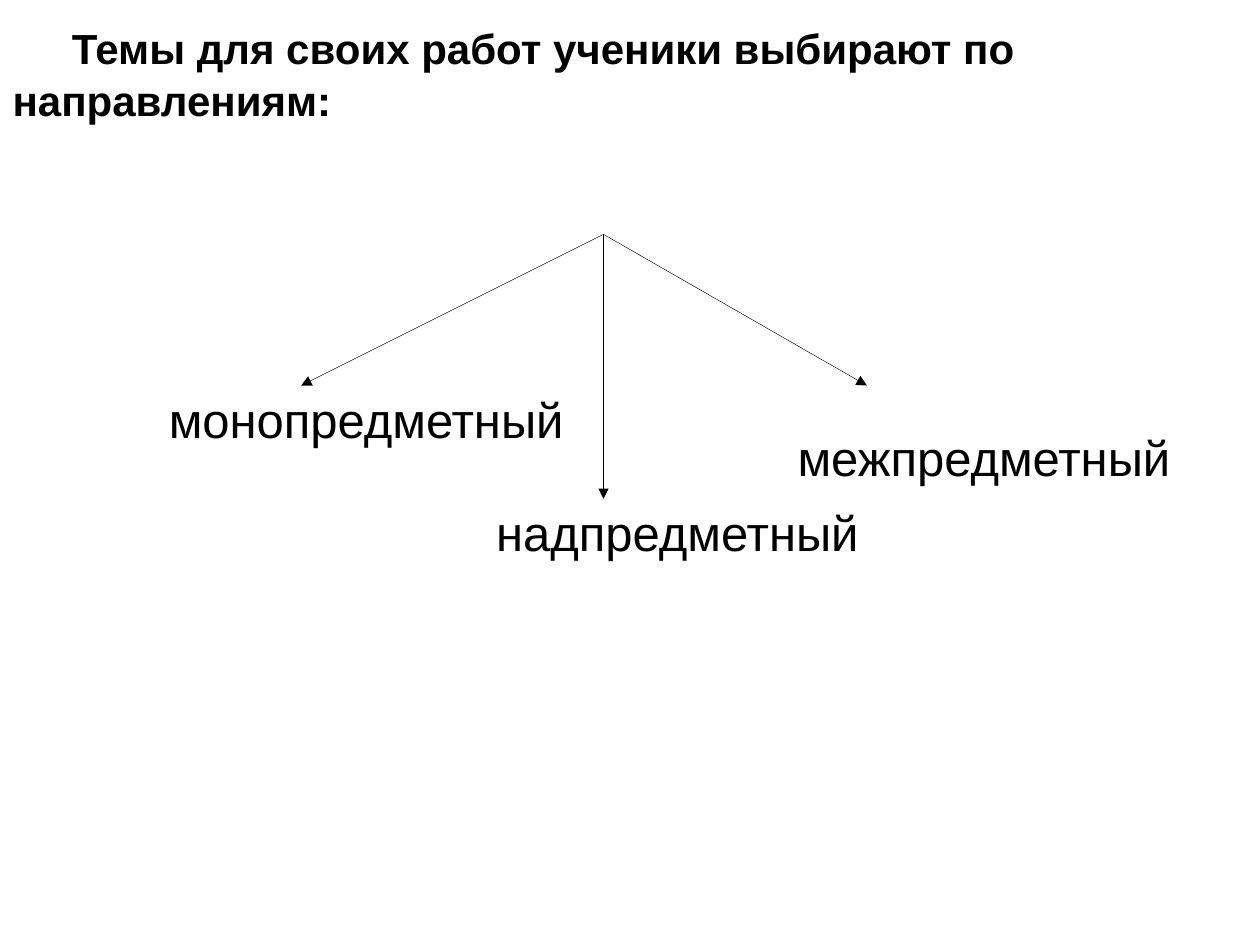
from lxml import etree
from pptx import Presentation
from pptx import util as u
from pptx.dml.color import RGBColor
from pptx.enum import shapes, text
from pptx.oxml.ns import qn

BLACK = RGBColor(0x00, 0x00, 0x00)
FONT = "Arial"
LABEL_INDENT = 0.28
TITLE_INDENT = 0.47
APEX = (2.4, 0)
DIRECTIONS = [
    ("монопредметный", (0, 1.2), 0.25, (-1.4, 1.2, 3.59, 1.13), text.PP_ALIGN.LEFT),
    ("межпредметный", (4.49, 1.2), 0.25, (3.59, 1.5, 3.89, 0.6), text.PP_ALIGN.LEFT),
    ("надпредметный", (2.4, 2.1), 0.5, (0.9, 2.1, 3.89, 1.23), text.PP_ALIGN.CENTER),
]


def style_paragraph(paragraph, size, indent, align, bold=False):
    """Set the alignment, first-line indent and font of a paragraph."""
    paragraph.alignment = align
    properties = paragraph._p.get_or_add_pPr()
    properties.set("marL", "0")
    properties.set("indent", str(u.Inches(indent)))
    for run in paragraph.runs:
        run.font.name = FONT
        run.font.size = u.Pt(size)
        run.font.bold = bold
        run.font.color.rgb = BLACK


def place_title(slide, left, top, width, height):
    """Fill and format the title placeholder in the given box."""
    title = slide.shapes.title
    title.left, title.top = u.Inches(left), u.Inches(top)
    title.width, title.height = u.Inches(width), u.Inches(height)
    frame = title.text_frame
    frame.text = "Темы для своих работ ученики выбирают по направлениям:"
    frame.word_wrap = True
    frame.auto_size = text.MSO_AUTO_SIZE.NONE
    frame.vertical_anchor = text.MSO_ANCHOR.TOP
    heading = frame.paragraphs[0]
    heading.line_spacing = 1.04
    style_paragraph(heading, 24, TITLE_INDENT, text.PP_ALIGN.LEFT, bold=True)


def add_arrow(parent, start, end, weight):
    """Draw a black arrow between two points in inches."""
    points = [u.Inches(value) for value in (*start, *end)]
    arrow = parent.add_connector(shapes.MSO_CONNECTOR.STRAIGHT, *points)
    arrow.line.color.rgb = BLACK
    arrow.line.width = u.Pt(weight)
    etree.SubElement(arrow.line._get_or_add_ln(), qn("a:tailEnd"), type="triangle")
    etree.SubElement(arrow._element.spPr, qn("a:effectLst"))


def add_label(parent, wording, box, align):
    """Write one direction's name in a box given in inches."""
    label = parent.add_textbox(*(u.Inches(value) for value in box))
    frame = label.text_frame
    frame.word_wrap = True
    frame.margin_left = frame.margin_right = u.Inches(0.07)
    frame.margin_top = frame.margin_bottom = u.Inches(0.03)
    frame.text = wording
    style_paragraph(frame.paragraphs[0], 28, LABEL_INDENT, align)


def place_directions(slide, left, top):
    """Group the arrows and direction names from the given corner."""
    scheme = slide.shapes.add_group_shape().shapes
    apex = (left + APEX[0], top + APEX[1])
    for _, (x, y), weight, _, _ in DIRECTIONS:
        add_arrow(scheme, apex, (left + x, top + y), weight)
    for wording, _, _, (x, y, width, height), align in DIRECTIONS:
        add_label(scheme, wording, (left + x, top + y, width, height), align)


def main():
    """Build the slide and save it."""
    deck = Presentation()
    deck.slide_width, deck.slide_height = u.Inches(10), u.Inches(7.5)
    slide = deck.slides.add_slide(deck.slide_layouts[5])
    place_title(slide, 0, 0.11, 10.2, 1.31)
    place_directions(slide, 2.39, 1.86)
    deck.save("out.pptx")


if __name__ == "__main__":
    main()
